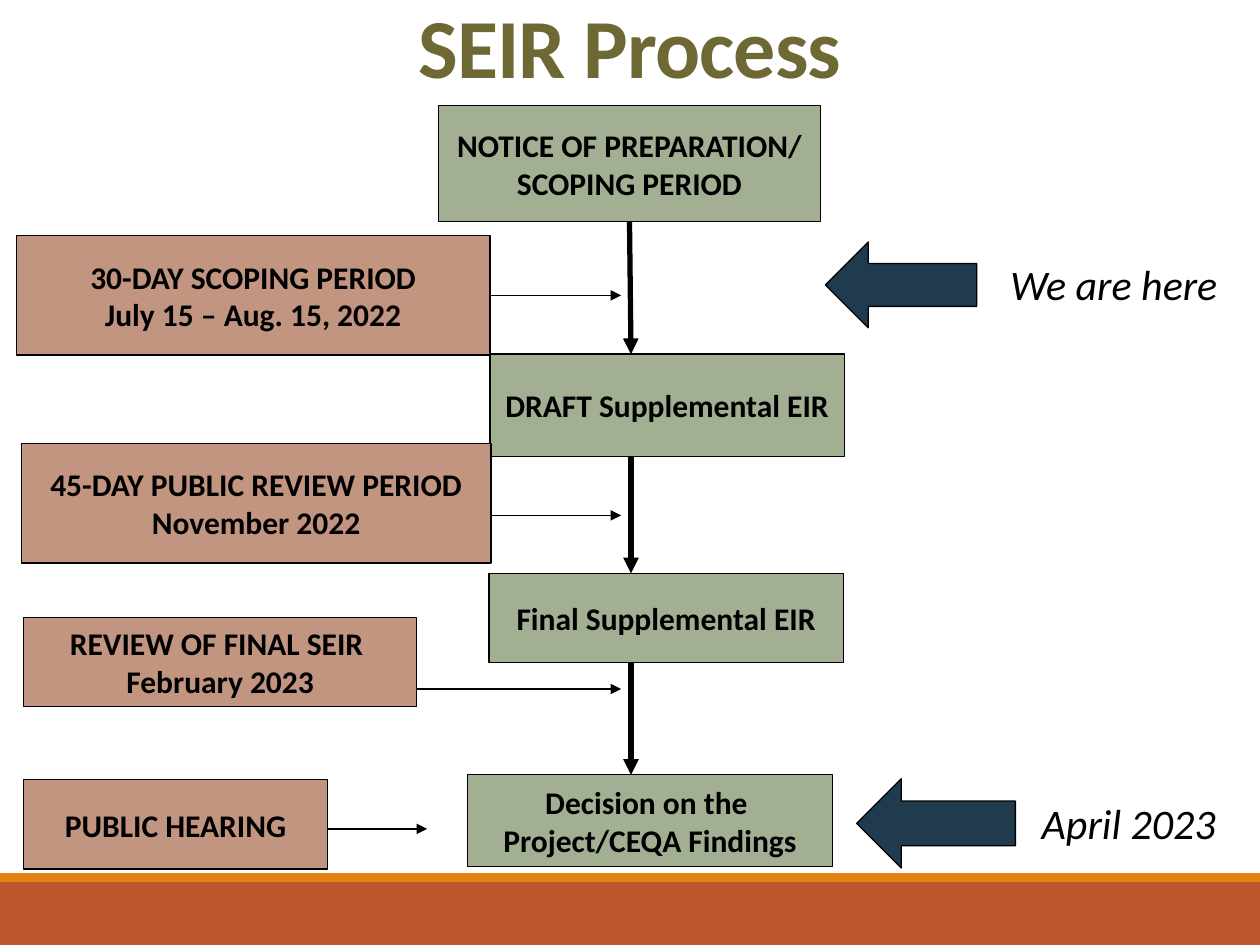
from dataclasses import dataclass
from lxml.etree import SubElement
from pptx import Presentation
from pptx.dml.color import RGBColor
from pptx.enum.shapes import MSO_CONNECTOR, MSO_SHAPE
from pptx.enum.text import MSO_ANCHOR, MSO_AUTO_SIZE, PP_ALIGN
from pptx.oxml.ns import qn
from pptx.util import Cm, Pt


@dataclass(frozen=True)
class Theme:
    font: str = "Calibri"
    ink: str = "000000"
    title: str = "6D6834"
    step: str = "A2AF92"
    event: str = "C29580"
    mark: str = "203A4E"
    band: str = "BD582C"
    strip: str = "E48312"
    head: int = 48
    body: int = 18
    note: int = 24
    edge: float = 0.75
    thin: float = 1
    thick: float = 3


T = Theme()
WIDE, HIGH = 25.4, 19.05

# All places are left, top, width, height in centimetres
TITLE = ("SEIR Process", (8.05, 0, 9.3, 2.06))
BANDS = [
    ((0, 17.78, WIDE, 1.27), T.band),
    ((0, 17.6, WIDE, 0.18), T.strip),
]
STEPS = [
    (["NOTICE OF PREPARATION/", "SCOPING PERIOD"], (8.84, 2.13, 7.7, 2.34)),
    (["DRAFT Supplemental EIR"], (9.88, 7.14, 7.14, 2.06)),
    (["Final Supplemental EIR"], (9.86, 11.56, 7.14, 1.8)),
    (["Decision on the ", "Project/CEQA Findings"], (9.42, 15.62, 7.37, 1.85)),
]
# Lines of text, place, height and end of the arrow to the right
EVENTS = [
    (["30-DAY SCOPING PERIOD", "July 15 – Aug. 15, 2022"],
     (0.33, 4.75, 9.55, 2.41), None, 12.52),
    (["45-DAY PUBLIC REVIEW PERIOD", "November 2022"],
     (0.43, 8.94, 9.47, 2.41), 10.39, 12.52),
    (["REVIEW OF FINAL SEIR ", "February 2023"],
     (0.48, 12.45, 7.92, 1.8), 13.89, 12.52),
    (["PUBLIC HEARING"], (0.48, 15.72, 6.12, 1.8), 16.71, 8.61),
]
MARKS = [
    ("We are here", (16.64, 4.88, 3.05, 1.73), (20.12, 5.08, 5, 1.27)),
    ("April 2023", (17.27, 15.7, 3.2, 1.8), (20.75, 15.95, 4.37, 1.27)),
]
STEM = 12.72


def put(shape, place):
    shape.left, shape.top, shape.width, shape.height = map(Cm, place)


def write(frame, lines, size, color, align, bold=False, italic=False):
    for i, line in enumerate(lines):
        para = frame.paragraphs[0] if i == 0 else frame.add_paragraph()
        para.alignment = align
        run = para.add_run()
        run.text = line
        font = run.font
        font.name, font.size = T.font, Pt(size)
        font.bold, font.italic = bold, italic
        font.color.rgb = RGBColor.from_string(color)


def draw(slide, kind, place, fill, edge=True):
    shape = slide.shapes.add_shape(kind, *map(Cm, place))
    shape.shadow.inherit = False
    shape.fill.solid()
    shape.fill.fore_color.rgb = RGBColor.from_string(fill)
    if edge:
        shape.line.color.rgb = RGBColor.from_string(T.ink)
        shape.line.width = Pt(T.edge)
    else:
        shape.line.fill.background()
    return shape


def box(slide, lines, place, fill):
    shape = draw(slide, MSO_SHAPE.RECTANGLE, place, fill)
    frame = shape.text_frame
    frame.word_wrap = False
    frame.vertical_anchor = MSO_ANCHOR.MIDDLE
    write(frame, lines, T.body, T.ink, PP_ALIGN.CENTER, bold=True)
    return shape


def arrow(slide, start, end, width):
    line = slide.shapes.add_connector(
        MSO_CONNECTOR.STRAIGHT, *map(Cm, start + end))
    line.line.color.rgb = RGBColor.from_string(T.ink)
    line.line.width = Pt(width)
    SubElement(line.line._get_or_add_ln(), qn("a:tailEnd"), type="triangle")
    SubElement(line._element.spPr, qn("a:effectLst"))
    return line


def head(slide):
    text, place = TITLE
    title = slide.shapes.title
    put(title, place)
    frame = title.text_frame
    frame.auto_size = MSO_AUTO_SIZE.NONE
    frame.word_wrap = False
    frame.vertical_anchor = MSO_ANCHOR.BOTTOM
    write(frame, [text], T.head, T.title, PP_ALIGN.CENTER, bold=True)
    para = frame.paragraphs[0]
    para.line_spacing = 0.85
    para.runs[0].font._element.set("spc", "-50")


def main():
    deck = Presentation()
    deck.slide_width, deck.slide_height = Cm(WIDE), Cm(HIGH)
    slide = deck.slides.add_slide(deck.slide_layouts[5])

    for place, fill in BANDS:
        draw(slide, MSO_SHAPE.RECTANGLE, place, fill, edge=False)
    head(slide)

    steps = [box(slide, lines, place, T.step) for lines, place in STEPS]
    for i, (upper, lower) in enumerate(zip(STEPS, STEPS[1:])):
        base = upper[1][1] + upper[1][3]
        stem = arrow(slide, (STEM, base), (STEM, lower[1][1]), T.thick)
        if i == 0:
            stem.begin_connect(steps[0], 2)

    for lines, place, level, end in EVENTS:
        event = box(slide, lines, place, T.event)
        left, top, width, height = place
        y = level or top + height / 2
        link = arrow(slide, (left + width, y), (end, y), T.thin)
        if level is None:
            link.begin_connect(event, 3)

    for text, place, spot in MARKS:
        draw(slide, MSO_SHAPE.LEFT_ARROW, place, T.mark)
        note = slide.shapes.add_textbox(*map(Cm, spot)).text_frame
        note.word_wrap = True
        note.auto_size = MSO_AUTO_SIZE.SHAPE_TO_FIT_TEXT
        write(note, [text], T.note, T.ink, PP_ALIGN.LEFT, italic=True)

    deck.save("out.pptx")


if __name__ == "__main__":
    main()
